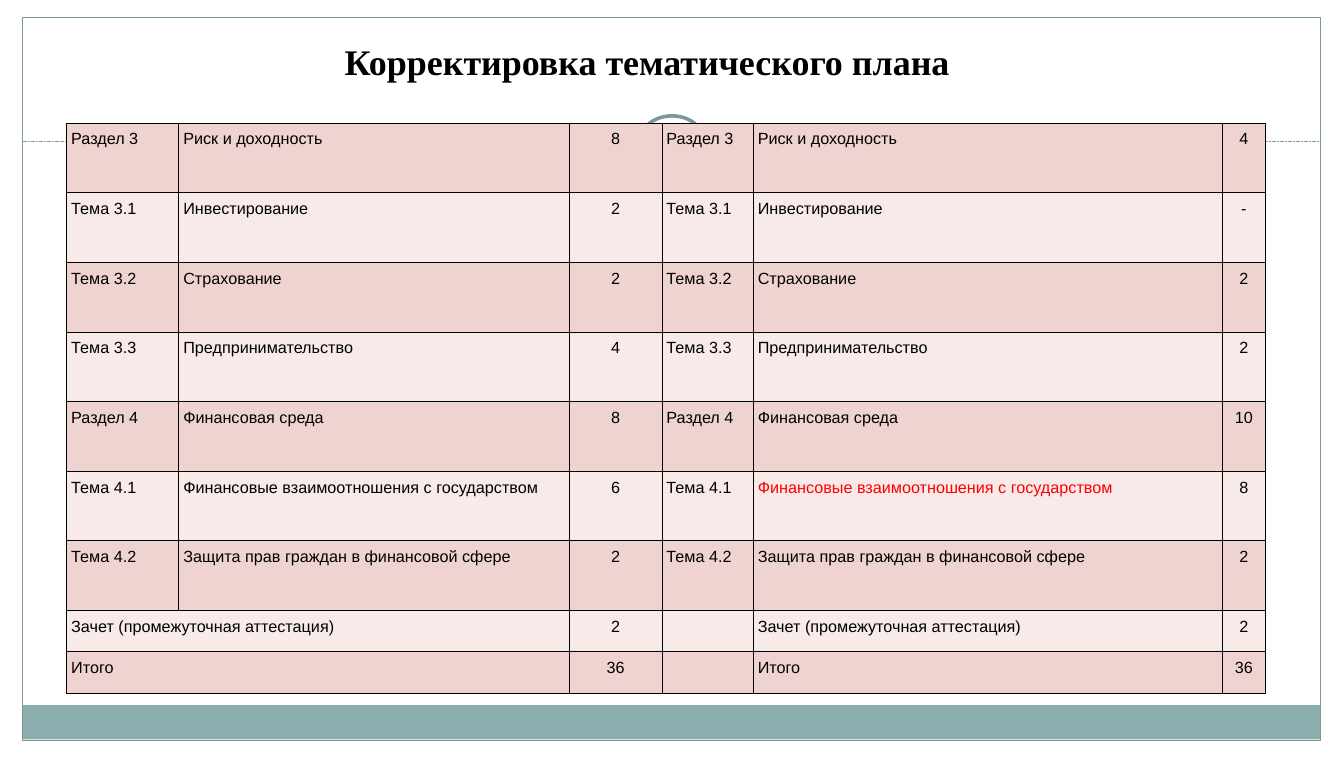
"""Build the slide comparing two versions of a thematic plan."""
from dataclasses import dataclass

from lxml import etree
from pptx import Presentation
from pptx.dml.color import RGBColor
from pptx.enum.dml import MSO_LINE
from pptx.enum.shapes import MSO_CONNECTOR, MSO_SHAPE
from pptx.enum.text import MSO_ANCHOR, MSO_AUTO_SIZE, PP_ALIGN
from pptx.oxml.ns import qn
from pptx.util import Inches, Pt

RECT, OVAL = MSO_SHAPE.RECTANGLE, MSO_SHAPE.OVAL
STRAIGHT, DASH = MSO_CONNECTOR.STRAIGHT, MSO_LINE.SQUARE_DOT
LEFT, CENTER = PP_ALIGN.LEFT, PP_ALIGN.CENTER
TOP, FIT = MSO_ANCHOR.TOP, MSO_AUTO_SIZE.SHAPE_TO_FIT_TEXT
WIDTH, HEIGHT = Inches(20.75), Inches(11.69)
TITLE_ONLY = 5
COLORS = {"white": "FFFFFF", "black": "000000", "red": "FF0000", "teal": "8CADAE",
          "outline": "7C999A", "rose": "EED3D0", "pale": "F7EAE9"}


@dataclass
class Decor:
    """A background shape placed in percent of the slide."""
    place: tuple[float, float, float, float]
    kind: int = RECT
    fill: str = ""
    weight: float = 0


@dataclass
class PlanRow:
    """One topic with its hours before and after the change."""
    code: str
    topic: str
    before: str
    after: str
    changed: bool = False


BACKDROP = [
    Decor((0, 0, 100, 20.36), fill="white"),
    Decor((0, 0, 1.69, 100), fill="white"),
    Decor((98.31, 0, 1.69, 100), fill="white"),
    Decor((1.64, 93.16, 96.58, 4.53), fill="teal"),
    Decor((1.69, 2.31, 96.58, 95.47), weight=0.75),
]
RINGS = [
    Decor((46.65, 13.94, 6.65, 8.9), OVAL, "white"),
    Decor((47.71, 15.31, 4.58, 6.16), OVAL, "white", 4),
]
PLAN = [
    PlanRow("Раздел 3", "Риск и доходность", "8", "4"),
    PlanRow("Тема 3.1", "Инвестирование", "2", "-"),
    PlanRow("Тема 3.2", "Страхование", "2", "2"),
    PlanRow("Тема 3.3", "Предпринимательство", "4", "2"),
    PlanRow("Раздел 4", "Финансовая среда", "8", "10"),
    PlanRow("Тема 4.1", "Финансовые взаимоотношения с государством", "6", "8", True),
    PlanRow("Тема 4.2", "Защита прав граждан в финансовой сфере", "2", "2"),
    PlanRow("", "Зачет (промежуточная аттестация)", "2", "2"),
    PlanRow("", "Итого", "36", "36"),
]
COLUMNS = [8.34, 29.06, 6.89, 6.8, 34.89, 3.23]
TOPIC_ROW, TOTAL_ROW = 9.2, 5.47
HOURS_COLUMNS, NEW_TOPIC_COLUMN = (2, 5), 4


def across(share: float) -> int:
    """Return a percentage of the slide width."""
    return round(WIDTH * share / 100)


def down(share: float) -> int:
    """Return a percentage of the slide height."""
    return round(HEIGHT * share / 100)


def color(name: str) -> RGBColor:
    """Look up a named colour."""
    return RGBColor.from_string(COLORS[name])


def add_decor(page, decor: Decor) -> None:
    """Draw one background shape."""
    left, top, width, height = decor.place
    shape = page.shapes.add_shape(decor.kind, across(left), down(top), across(width), down(height))
    shape.shadow.inherit = False
    if decor.fill:
        shape.fill.solid()
        shape.fill.fore_color.rgb = color(decor.fill)
    else:
        shape.fill.background()
    if decor.weight:
        shape.line.color.rgb = color("outline")
        shape.line.width = Pt(decor.weight)
    else:
        shape.line.fill.background()


def add_divider(page) -> None:
    """Draw the dashed line under the heading."""
    level = down(18.65)
    line = page.shapes.add_connector(STRAIGHT, across(1.69), level, across(98.27), level)
    line.line.color.rgb = color("outline")
    line.line.width = Pt(0.75)
    line.line.dash_style = DASH
    etree.SubElement(line.element.spPr, qn("a:effectLst"))


def set_title(page, text: str) -> None:
    """Place and format the title above the backdrop."""
    title = page.shapes.title
    page.shapes.element.append(title.element)
    title.left, title.top = across(25.16), down(4.79)
    title.width, title.height = across(46.84), down(6.59)
    frame = title.text_frame
    frame.text = text
    frame.word_wrap = False
    frame.auto_size = FIT
    para = frame.paragraphs[0]
    para.alignment = LEFT
    para.font.name, para.font.size, para.font.bold = "Times New Roman", Pt(40), True
    para.font.color.rgb = color("black")


def add_borders(cell) -> None:
    """Give a cell a thin black line on every side."""
    properties = cell._tc.get_or_add_tcPr()
    for side in ("lnL", "lnR", "lnT", "lnB"):
        border = etree.SubElement(properties, qn(f"a:{side}"), w=str(Pt(1)))
        paint = etree.SubElement(border, qn("a:solidFill"))
        etree.SubElement(paint, qn("a:srgbClr"), val=COLORS["black"])


def fill_cell(cell, text: str, fill: str, ink: str, align: int) -> None:
    """Write and format one table cell."""
    add_borders(cell)
    cell.fill.solid()
    cell.fill.fore_color.rgb = color(fill)
    cell.margin_left = cell.margin_right = cell.margin_top = cell.margin_bottom = across(0.34)
    cell.vertical_anchor = TOP
    cell.text = text
    para = cell.text_frame.paragraphs[0]
    para.alignment, para.line_spacing = align, 1.15
    para.font.name, para.font.size = "Arial", Pt(18)
    para.font.color.rgb = color(ink)


def add_plan(page) -> None:
    """Draw the table with the old plan beside the new one."""
    heights = [TOPIC_ROW if row.code else TOTAL_ROW for row in PLAN]
    table = page.shapes.add_table(len(PLAN), len(COLUMNS), across(4.96), down(16.25),
                                  across(sum(COLUMNS)), down(sum(heights))).table
    table.first_row = table.horz_banding = False
    for column, share in zip(table.columns, COLUMNS):
        column.width = across(share)
    for index, (row, share) in enumerate(zip(PLAN, heights)):
        table.rows[index].height = down(share)
        label = (row.code, row.topic) if row.code else (row.topic, "")
        texts = (*label, row.before, row.code, row.topic, row.after)
        for place, text in enumerate(texts):
            fill_cell(table.cell(index, place), text,
                      "pale" if index % 2 else "rose",
                      "red" if row.changed and place == NEW_TOPIC_COLUMN else "black",
                      CENTER if place in HOURS_COLUMNS else LEFT)
        if not row.code:
            table.cell(index, 0).merge(table.cell(index, 1))


def main() -> None:
    """Build and save the deck."""
    deck = Presentation()
    deck.slide_width, deck.slide_height = WIDTH, HEIGHT
    page = deck.slides.add_slide(deck.slide_layouts[TITLE_ONLY])
    for decor in BACKDROP:
        add_decor(page, decor)
    add_divider(page)
    for ring in RINGS:
        add_decor(page, ring)
    set_title(page, "Корректировка тематического плана")
    add_plan(page)
    deck.save("out.pptx")


if __name__ == "__main__":
    main()
